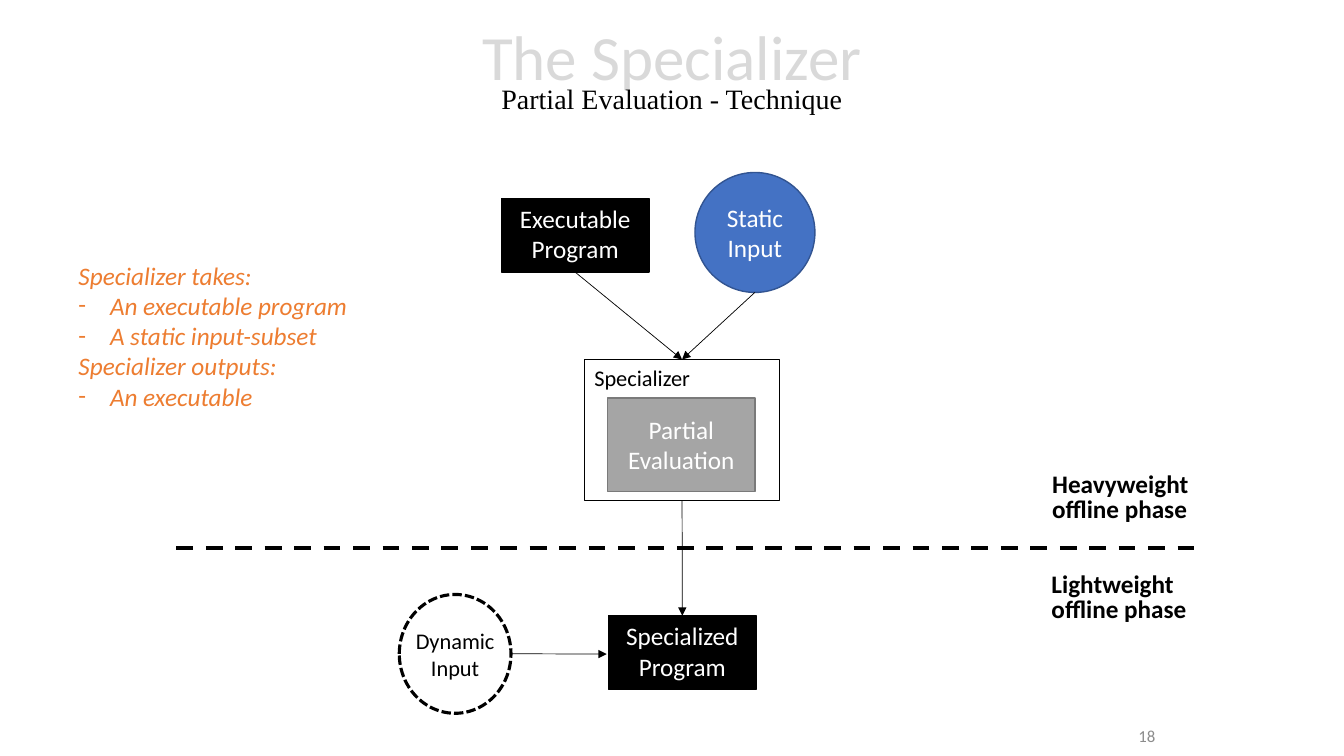
from dataclasses import dataclass, field
from typing import Any, Optional

from lxml.etree import SubElement
from pptx import Presentation
from pptx.dml.color import RGBColor
from pptx.enum.dml import MSO_LINE
from pptx.enum.shapes import MSO_CONNECTOR, MSO_SHAPE
from pptx.enum.text import MSO_ANCHOR, MSO_AUTO_SIZE, PP_ALIGN
from pptx.oxml.ns import qn
from pptx.util import Pt

COLORS = {
    "black": "000000", "white": "FFFFFF", "title": "D9D9D9", "number": "8C8C8C",
    "blue": "4472C4", "blue_edge": "325491", "gray": "A5A5A5", "gray_edge": "7A7A7A",
    "orange": "ED7D31",
}
BULLET = "- "
BULLET_INDENT = 22.5
CENTER, LEFT, RIGHT = PP_ALIGN.CENTER, PP_ALIGN.LEFT, PP_ALIGN.RIGHT


@dataclass(frozen=True)
class Node:
    kind: MSO_SHAPE
    box: tuple[float, float, float, float]
    lines: list[str]
    fill: str
    edge: str
    text: str = "white"
    size: float = 18
    weight: float = 1
    dash: Optional[MSO_LINE] = None
    align: PP_ALIGN = CENTER
    frame: dict[str, Any] = field(default_factory=dict)


@dataclass(frozen=True)
class Label:
    box: tuple[float, float, float, float]
    lines: list[str]
    color: str
    size: float = 18
    align: PP_ALIGN = LEFT
    spacing: Optional[float] = None
    font: dict[str, Any] = field(default_factory=dict)
    frame: dict[str, Any] = field(default_factory=dict)


@dataclass(frozen=True)
class Line:
    start: tuple[float, float]
    end: tuple[float, float]
    source: Optional[tuple[str, int]] = None
    target: Optional[tuple[str, int]] = None
    weight: float = 0.5
    dash: Optional[MSO_LINE] = None
    arrow: bool = True


RECTANGLE, OVAL = MSO_SHAPE.RECTANGLE, MSO_SHAPE.OVAL
TOP = {"vertical_anchor": MSO_ANCHOR.TOP}
NODES = {
    "specializer": Node(RECTANGLE, (417.4, 256.8, 139.6, 100.6), ["Specializer"],
                        "white", "black", text="black", size=16, align=LEFT, frame=TOP),
    "static": Node(OVAL, (496.4, 123.2, 85.7, 85.7), ["Static Input"], "blue", "blue_edge"),
    "evaluation": Node(RECTANGLE, (434, 284.4, 105.3, 66.6), ["Partial Evaluation"],
                       "gray", "gray_edge"),
    "executable": Node(RECTANGLE, (358.2, 141.8, 105.4, 52.6), ["Executable", "Program"],
                       "black", "black", frame=TOP),
    "specialized": Node(RECTANGLE, (434.7, 439.8, 105.4, 52.6), ["Specialized", "Program"],
                        "black", "black", frame=TOP),
    "dynamic": Node(OVAL, (285.2, 424.6, 79.8, 84.9), ["Dynamic Input"], "white", "black",
                    text="black", size=16, weight=2.25, dash=MSO_LINE.SQUARE_DOT,
                    frame={"margin_left": 0, "margin_right": 0}),
}
LINES = [
    Line((410.9, 194.4), (487.2, 256.8), ("executable", 2), ("specializer", 0)),
    Line((539.2, 208.9), (487.2, 256.8), target=("specializer", 0)),
    Line((487.2, 357.4), (487.4, 439.8), ("specializer", 2), ("specialized", 0)),
    Line((365, 467), (433.4, 467.2)),
    Line((126, 391.4), (854, 391.4), weight=3, dash=MSO_LINE.DASH, arrow=False),
]
NO_WRAP = {"word_wrap": False, "auto_size": MSO_AUTO_SIZE.SHAPE_TO_FIT_TEXT}
PHASE = {"color": "black", "spacing": Pt(18), "font": {"bold": True}, "frame": NO_WRAP}
LABELS = [
    Label((670.3, 511.4, 162, 28), ["18"], "number", 12, RIGHT,
          frame={"vertical_anchor": MSO_ANCHOR.MIDDLE}),
    Label((744.5, 334.5, 112.3, 44), ["Heavyweight", "offline phase"], **PHASE),
    Label((744, 405.9, 112.3, 44), ["Lightweight", "offline phase"], **PHASE),
    Label((49, 182.2, 208.8, 116.6),
          ["Specializer takes:", "- An executable program", "- A static input-subset",
           "Specializer outputs:", "- An executable"],
          "orange", font={"italic": True}, frame=NO_WRAP),
]


def rgb(name: str) -> RGBColor:
    return RGBColor.from_string(COLORS[name])


def apply(target: Any, values: dict[str, Any]) -> None:
    """Set each named attribute of the target."""
    for name, value in values.items():
        setattr(target, name, value)


def add_run(paragraph: Any, text: str, size: float, color: str,
            name: str = "Calibri", **font: Any) -> None:
    run = paragraph.add_run()
    run.text = text
    apply(run.font, {"name": name, "size": Pt(size), **font})
    run.font.color.rgb = rgb(color)


def add_bullet(paragraph: Any) -> None:
    properties = paragraph._p.get_or_add_pPr()
    properties.set("marL", str(Pt(BULLET_INDENT)))
    properties.set("indent", str(-Pt(BULLET_INDENT)))
    SubElement(properties, qn("a:buFont"), typeface="Calibri")
    SubElement(properties, qn("a:buChar"), char=BULLET.strip())


def write_lines(text_frame: Any, lines: list[str], size: float, color: str, align: PP_ALIGN,
                spacing: Optional[float] = None, **font: Any) -> None:
    for index, line in enumerate(lines):
        paragraph = text_frame.add_paragraph() if index else text_frame.paragraphs[0]
        apply(paragraph, {"alignment": align, "line_spacing": spacing})
        if line.startswith(BULLET):
            add_bullet(paragraph)
        add_run(paragraph, line.removeprefix(BULLET), size, color, **font)


def draw_node(slide: Any, node: Node) -> Any:
    shape = slide.shapes.add_shape(node.kind, *map(Pt, node.box))
    shape.shadow.inherit = False
    shape.fill.solid()
    shape.fill.fore_color.rgb = rgb(node.fill)
    shape.line.color.rgb = rgb(node.edge)
    apply(shape.line, {"width": Pt(node.weight), "dash_style": node.dash})
    apply(shape.text_frame,
          {"word_wrap": True, "vertical_anchor": MSO_ANCHOR.MIDDLE, **node.frame})
    write_lines(shape.text_frame, node.lines, node.size, node.text, node.align)
    return shape


def draw_label(slide: Any, label: Label) -> None:
    text_frame = slide.shapes.add_textbox(*map(Pt, label.box)).text_frame
    apply(text_frame, {"word_wrap": True, **label.frame})
    write_lines(text_frame, label.lines, label.size, label.color, label.align,
                label.spacing, **label.font)


def draw_line(slide: Any, line: Line, shapes: dict[str, Any]) -> None:
    connector = slide.shapes.add_connector(
        MSO_CONNECTOR.STRAIGHT, *map(Pt, line.start + line.end))
    if line.source:
        connector.begin_connect(shapes[line.source[0]], line.source[1])
    if line.target:
        connector.end_connect(shapes[line.target[0]], line.target[1])
    connector.line.color.rgb = rgb("black")
    apply(connector.line, {"width": Pt(line.weight), "dash_style": line.dash})
    if line.arrow:
        SubElement(connector.line._get_or_add_ln(), qn("a:tailEnd"), type="triangle")
    SubElement(connector._element.spPr, qn("a:effectLst"))


def draw_title(slide: Any) -> None:
    text_frame = slide.shapes.add_textbox(Pt(120), Pt(2), Pt(720), Pt(104.4)).text_frame
    apply(text_frame, {"word_wrap": True, "vertical_anchor": MSO_ANCHOR.MIDDLE})
    paragraph = text_frame.paragraphs[0]
    apply(paragraph, {"alignment": CENTER, "line_spacing": 0.7})
    add_run(paragraph, "The Specializer", 45, "title")
    paragraph.add_line_break()
    add_run(paragraph, "Partial Evaluation - Technique", 20, "black", "Times New Roman")


def main() -> None:
    presentation = Presentation()
    apply(presentation, {"slide_width": Pt(960), "slide_height": Pt(540)})
    slide = presentation.slides.add_slide(presentation.slide_layouts[6])
    draw_title(slide)
    shapes = {name: draw_node(slide, node) for name, node in NODES.items()}
    for line in LINES:
        draw_line(slide, line, shapes)
    for label in LABELS:
        draw_label(slide, label)
    presentation.save("out.pptx")


if __name__ == "__main__":
    main()
